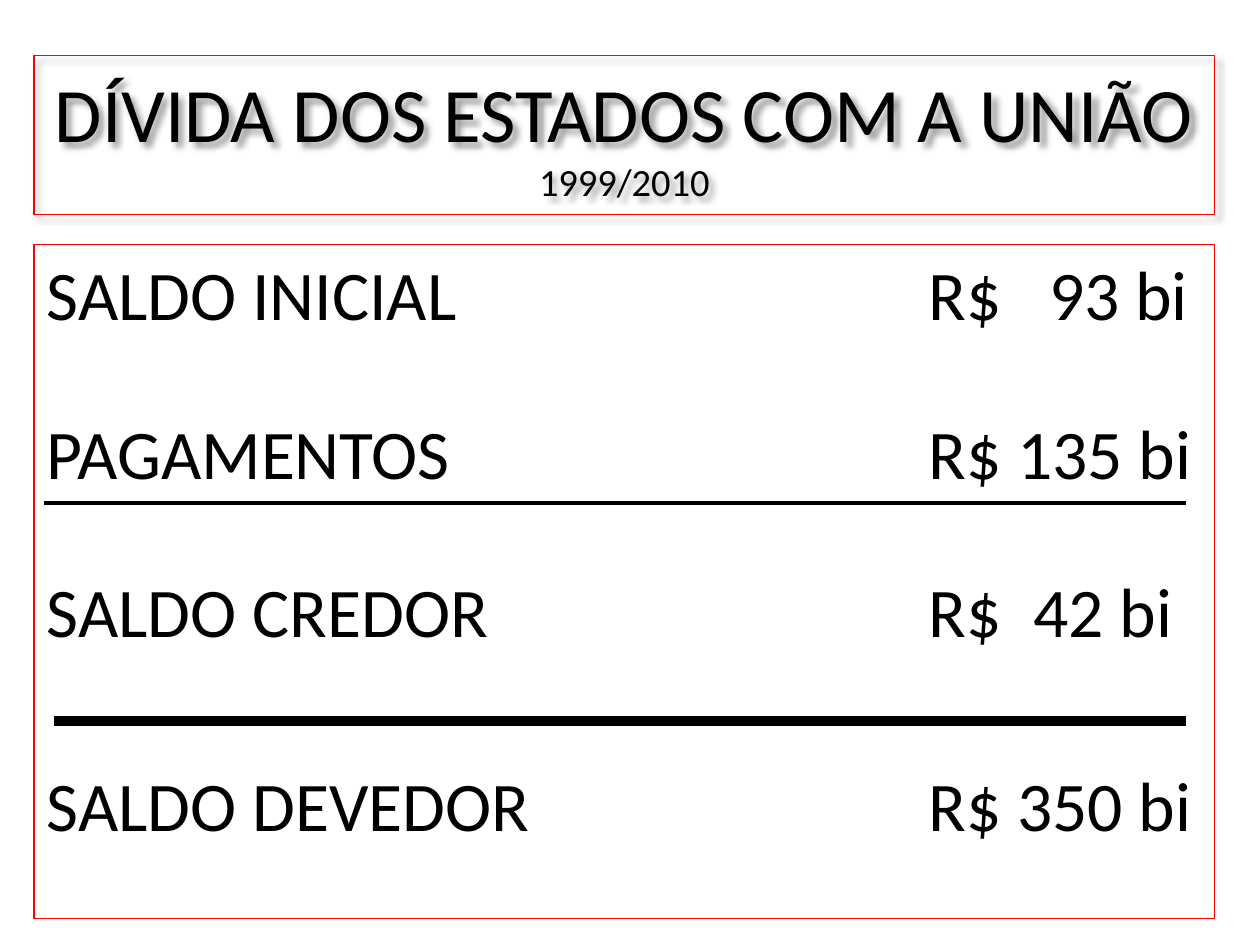
from dataclasses import dataclass

from lxml import etree
from pptx import Presentation
from pptx.dml.color import RGBColor
from pptx.enum.shapes import MSO_CONNECTOR
from pptx.enum.text import MSO_ANCHOR, MSO_AUTO_SIZE, PP_ALIGN
from pptx.oxml.ns import qn
from pptx.util import Emu, Inches, Pt

STRAIGHT = MSO_CONNECTOR.STRAIGHT
TOP, MIDDLE = MSO_ANCHOR.TOP, MSO_ANCHOR.MIDDLE
LEFT, CENTER = PP_ALIGN.LEFT, PP_ALIGN.CENTER
NO_FIT = MSO_AUTO_SIZE.NONE

WIDE, HIGH = Inches(10), Inches(7.5)
COLORS = {"text": "000000", "frame": "FF0000", "rule": "000000", "shadow": "000000"}
FONT = "Calibri"
ROW_SIZE = 39.8

# Four tabs, one inch apart, lead from each label to its price
TAB_STEP = Inches(1)
TABS = "\t" * 4


@dataclass
class Box:
    """Frame in shares of the slide's width and height."""
    x: float
    y: float
    w: float
    h: float


@dataclass
class Row:
    """Label and value, with the extra gap after R$ and above, in points."""
    label: str
    value: str
    gap: float
    before: float


@dataclass
class Rule:
    """Horizontal line in shares of the slide, with its weight in points."""
    start: float
    end: float
    y: float
    weight: float


HEAD = Box(0.027, 0.059, 0.937, 0.168)
BODY = Box(0.027, 0.259, 0.937, 0.713)
ROWS = [
    Row("SALDO INICIAL", "93 bi", 18, 0),
    Row("PAGAMENTOS", "135 bi", 0, 42.8),
    Row("SALDO CREDOR", "42 bi", 9, 42.8),
    Row("SALDO DEVEDOR", "350 bi", 0, 62.8),
]
RULES = [Rule(0.035, 0.941, 0.532, 2.25), Rule(0.043, 0.941, 0.763, 6)]


def color(name: str) -> RGBColor:
    return RGBColor.from_string(COLORS[name])


def place(shape, box: Box, anchor) -> None:
    """Move a placeholder, frame it and set its text area."""
    spots = {"left": box.x * WIDE, "top": box.y * HIGH,
             "width": box.w * WIDE, "height": box.h * HIGH}
    for key, value in spots.items():
        setattr(shape, key, Emu(round(value)))
    shape.line.color.rgb = color("frame")
    shape.line.width = Pt(0.75)
    form = {"word_wrap": True, "auto_size": NO_FIT, "vertical_anchor": anchor}
    for key, value in form.items():
        setattr(shape.text_frame, key, value)


def write(para, text: str, size: float, gap: float = 0) -> None:
    """Add a run; gap widens its letter spacing by some points."""
    run = para.add_run()
    run.text = text
    for key, value in {"name": FONT, "size": Pt(size), "bold": False}.items():
        setattr(run.font, key, value)
    run.font.color.rgb = color("text")
    if gap:
        run._r.get_or_add_rPr().set("spc", str(round(gap * 100)))


def shade(shape) -> None:
    """Give a shape a soft outer shadow."""
    effects = etree.SubElement(shape._element.spPr, qn("a:effectLst"))
    outer = etree.SubElement(effects, qn("a:outerShdw"), blurRad=str(Pt(4)),
                             dist=str(Pt(3)), dir=str(45 * 60000),
                             algn="tl", rotWithShape="0")
    tint = etree.SubElement(outer, qn("a:srgbClr"), val=COLORS["shadow"])
    etree.SubElement(tint, qn("a:alpha"), val="40000")


def add_row(para, row: Row) -> None:
    form = {"alignment": LEFT, "space_before": Pt(row.before), "space_after": Pt(0)}
    for key, value in form.items():
        setattr(para, key, value)
    para._p.get_or_add_pPr().set("defTabSz", str(TAB_STEP))
    write(para, f"{row.label}{TABS}R$", ROW_SIZE)
    write(para, " ", ROW_SIZE, row.gap)
    write(para, row.value, ROW_SIZE)


def add_rule(slide, rule: Rule) -> None:
    x1, x2, y = (Emu(round(n)) for n in
                 (rule.start * WIDE, rule.end * WIDE, rule.y * HIGH))
    line = slide.shapes.add_connector(STRAIGHT, x1, y, x2, y)
    line.line.color.rgb = color("rule")
    line.line.width = Pt(rule.weight)
    etree.SubElement(line._element.spPr, qn("a:effectLst"))


def main() -> None:
    deck = Presentation()
    deck.slide_width, deck.slide_height = WIDE, HIGH
    slide = deck.slides.add_slide(deck.slide_layouts[0])
    title, body = slide.placeholders

    # Title with the period below
    place(title, HEAD, MIDDLE)
    shade(title)
    para = title.text_frame.paragraphs[0]
    para.alignment = CENTER
    write(para, "DÍVIDA DOS ESTADOS COM A UNIÃO", 44)
    para.add_line_break()
    write(para, "1999/2010", 22)

    # Balance rows
    place(body, BODY, TOP)
    frame = body.text_frame
    frame.margin_top = Inches(0.05)
    for index, row in enumerate(ROWS):
        add_row(frame.add_paragraph() if index else frame.paragraphs[0], row)

    # Rules between the rows
    for rule in RULES:
        add_rule(slide, rule)

    deck.save("out.pptx")


if __name__ == "__main__":
    main()
